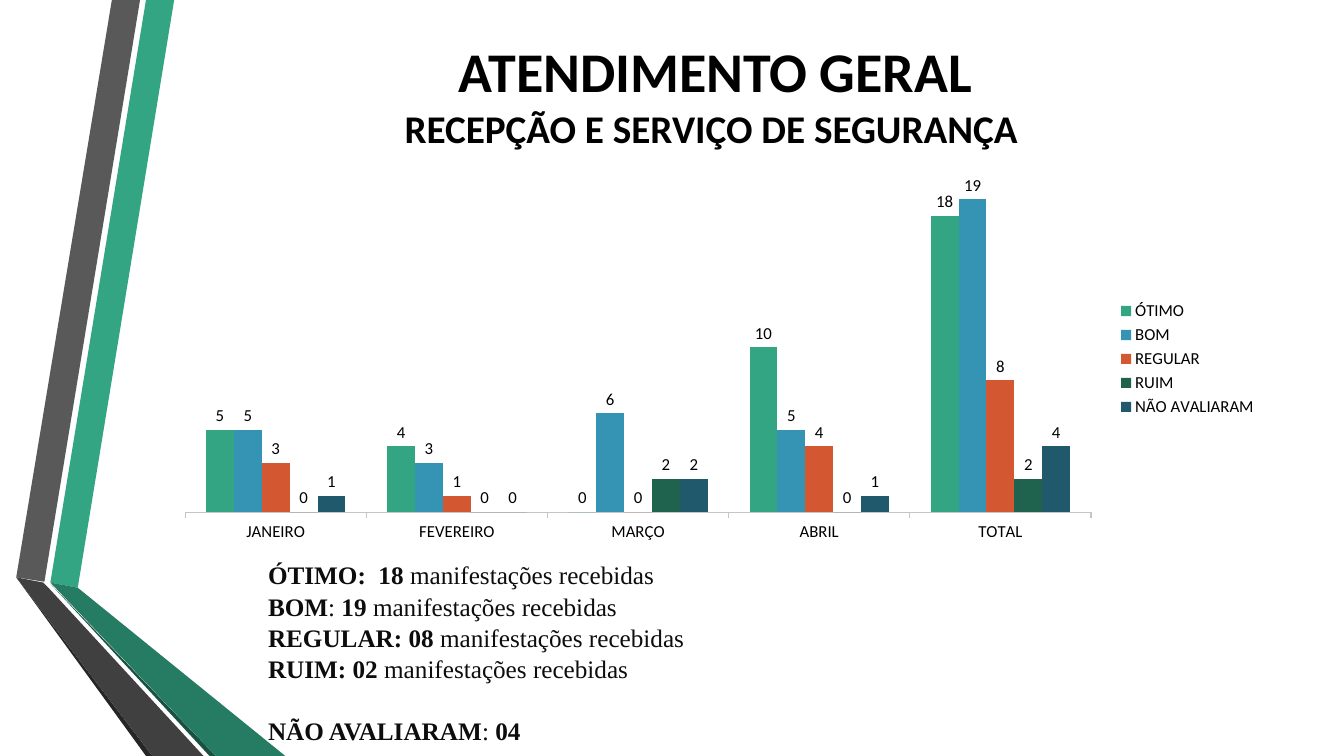
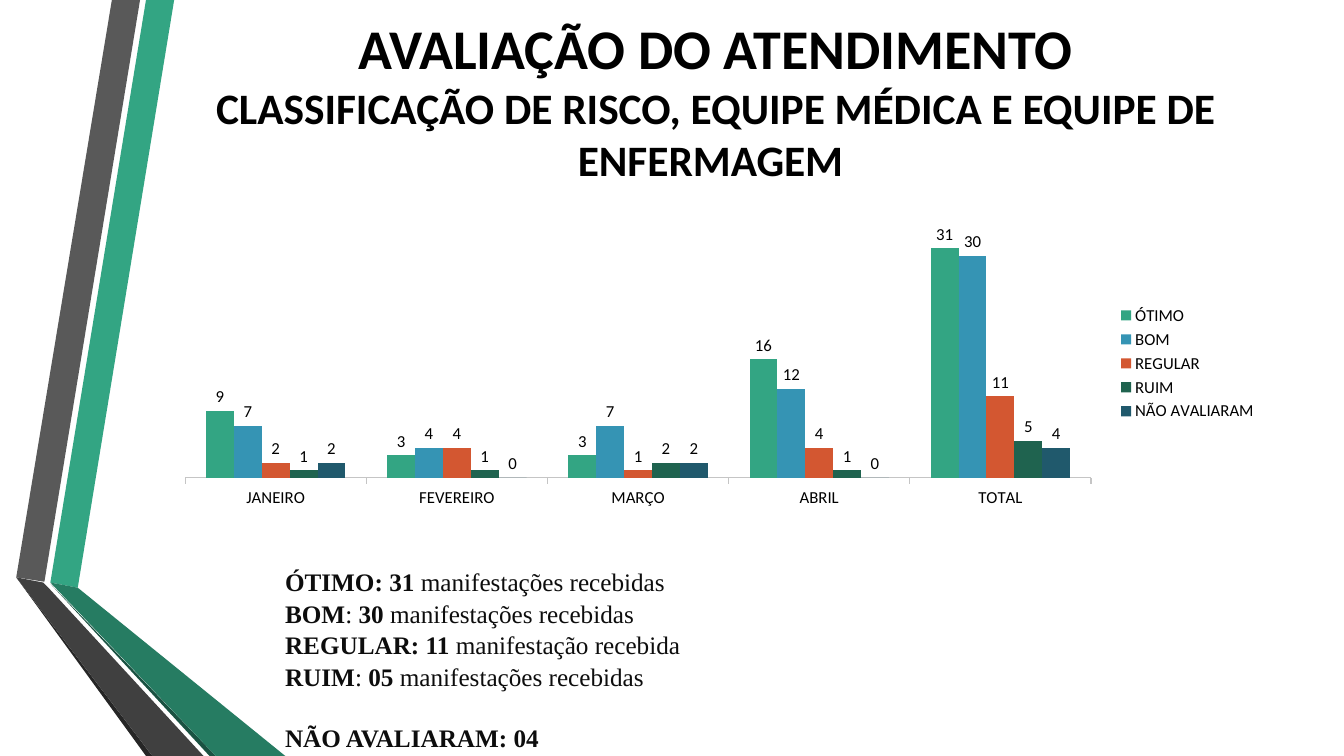
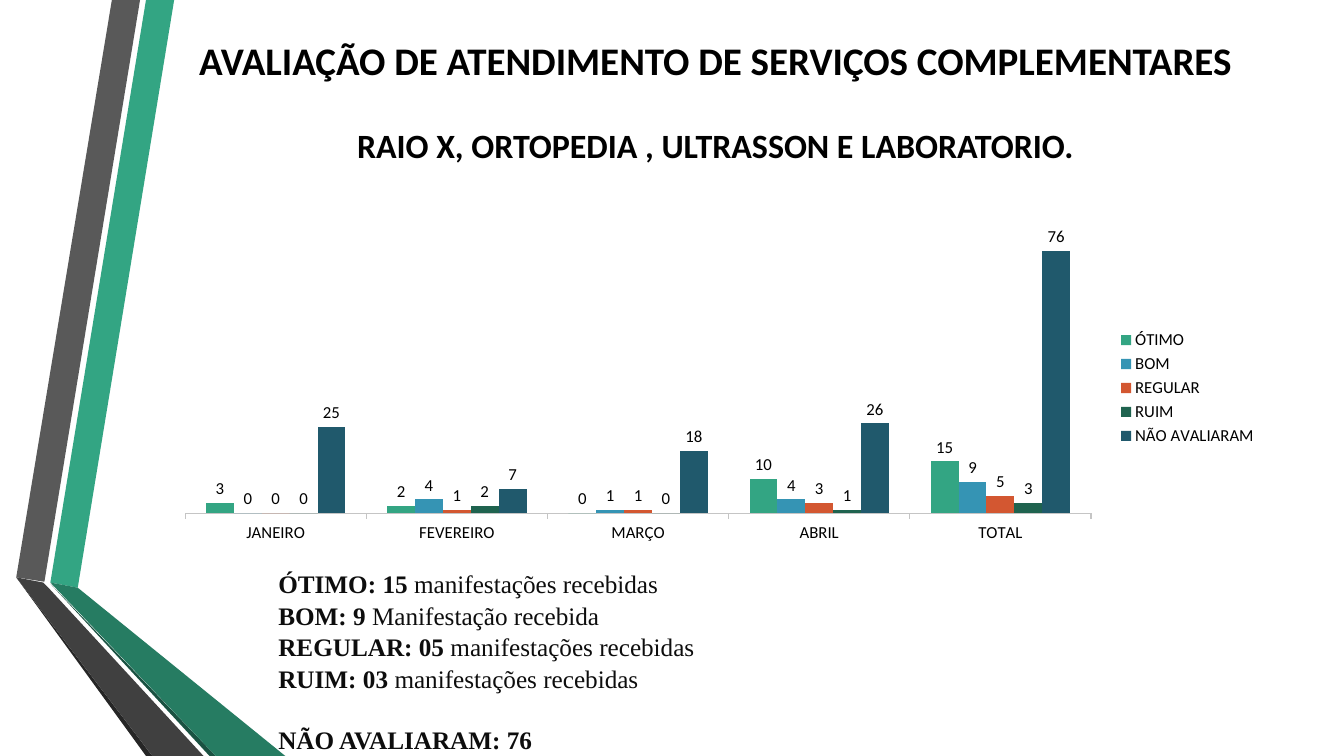
from collections import namedtuple

from lxml import etree
from pptx import Presentation
from pptx.chart.data import CategoryChartData
from pptx.dml.color import RGBColor
from pptx.enum.chart import XL_CHART_TYPE, XL_LABEL_POSITION, XL_LEGEND_POSITION, XL_TICK_MARK
from pptx.enum.text import MSO_ANCHOR, MSO_AUTO_SIZE, PP_ALIGN
from pptx.oxml import parse_xml
from pptx.oxml.ns import nsdecls, qn
from pptx.util import Cm, Pt

CLUSTERED = XL_CHART_TYPE.COLUMN_CLUSTERED
OUTSIDE_END = XL_LABEL_POSITION.OUTSIDE_END
LEGEND_RIGHT = XL_LEGEND_POSITION.RIGHT
TICK_OUT = XL_TICK_MARK.OUTSIDE
TICK_NONE = XL_TICK_MARK.NONE
MIDDLE = MSO_ANCHOR.MIDDLE
TOP = MSO_ANCHOR.TOP
NO_FIT = MSO_AUTO_SIZE.NONE
CENTER = PP_ALIGN.CENTER
LEFT = PP_ALIGN.LEFT

BLACK = RGBColor(0x00, 0x00, 0x00)
INK = RGBColor(0x0D, 0x0D, 0x0D)
AXIS_GRAY = RGBColor(0xC5, 0xC5, 0xC5)
GREEN = RGBColor(0x33, 0xA5, 0x83)
BLUE = RGBColor(0x35, 0x94, 0xB4)
ORANGE = RGBColor(0xD3, 0x57, 0x31)
DARK_GREEN = RGBColor(0x1F, 0x63, 0x4F)
DARK_BLUE = RGBColor(0x20, 0x59, 0x6C)
FOLD_GREEN = RGBColor(0x26, 0x7C, 0x62)
EDGE_GREEN = RGBColor(0x1A, 0x52, 0x42)
GRAY = RGBColor(0x59, 0x59, 0x59)
FOLD_GRAY = RGBColor(0x40, 0x40, 0x40)
EDGE_GRAY = RGBColor(0x26, 0x26, 0x26)

Box = namedtuple("Box", "left top width height")

PAGE_WIDTH, PAGE_HEIGHT = 33.87, 19.05
CONTENT_LEFT, CONTENT_WIDTH = 4.11, 27.84
CONTENT_RIGHT = CONTENT_LEFT + CONTENT_WIDTH
SUMMARY_HEIGHT = 4.88
PLOT_LEFT, PLOT_WIDTH, PLOT_HEIGHT = 0.02, 0.82, 0.86

TITLE_FONT = {"name": "Calibri", "bold": True}
SUMMARY_FONT = {"name": "Times New Roman", "size": Pt(18)}
CHART_FONT = {"name": "Calibri", "size": Pt(12), "bold": False}

RIBBONS = [
    (GREEN, [(1.27, 14.68), (1.96, 14.81), (4.39, 0), (3.68, 0)]),
    (GRAY, [(3.53, 0), (2.82, 0), (0.41, 14.55), (1.12, 14.66)]),
    (EDGE_GRAY, [(0.41, 14.55), (3.68, 19.05), (3.84, 19.05)]),
    (EDGE_GREEN, [(1.27, 14.71), (5.28, 19.05), (5.44, 19.05)]),
    (FOLD_GREEN, [(1.27, 14.68), (5.44, 19.05), (7.19, 19.05), (1.96, 14.81)]),
    (FOLD_GRAY, [(5.13, 19.05), (1.22, 14.81), (1.09, 14.68), (0.41, 14.55), (3.84, 19.05)]),
]

MONTHS = ["JANEIRO", "FEVEREIRO", "MARÇO", "ABRIL", "TOTAL"]
RATINGS = [
    ("ÓTIMO", GREEN),
    ("BOM", BLUE),
    ("REGULAR", ORANGE),
    ("RUIM", DARK_GREEN),
    ("NÃO AVALIARAM", DARK_BLUE),
]

REPORTS = [
    {
        "title": [("ATENDIMENTO GERAL", 40, 0), ("RECEPÇÃO E SERVIÇO DE SEGURANÇA ", 28, 0)],
        "title_span": (0.53, 3.68),
        "chart_span": (4.22, 9.65),
        "plot_top": 0.04,
        "axis_max": 20,
        "counts": [[5, 4, 0, 10, 18], [5, 3, 6, 5, 19], [3, 1, 0, 4, 8],
                   [0, 0, 2, 0, 2], [1, 0, 2, 1, 4]],
        "summary_at": (6.5, 13.94),
        "summary": ["ÓTIMO:  18 |manifestações recebidas", "BOM|: |19 |manifestações recebidas",
                    "REGULAR: 08 |manifestações recebidas", "RUIM: 02 |manifestações recebidas",
                    "NÃO AVALIARAM|: |04"],
    },
    {
        "title": [("AVALIAÇÃO DO ATENDIMENTO", 40, 0),
                  ("CLASSIFICAÇÃO DE RISCO, EQUIPE MÉDICA E EQUIPE DE ENFERMAGEM ", 31, 0)],
        "title_span": (0, 5),
        "chart_span": (5.36, 7.59),
        "plot_top": 0.02,
        "axis_max": 35,
        "counts": [[9, 3, 3, 16, 31], [7, 4, 7, 12, 30], [2, 4, 1, 4, 11],
                   [1, 1, 2, 1, 5], [2, 0, 2, 0, 4]],
        "summary_at": (6.93, 14.12),
        "summary": ["ÓTIMO: 31 |manifestações recebidas", "BOM|: |30 |manifestações recebidas",
                    "REGULAR: 11 |manifestação recebida", "RUIM|: |05 |manifestações recebidas",
                    "NÃO AVALIARAM: 04"],
    },
    {
        "title": [("AVALIAÇÃO DE ATENDIMENTO DE SERVIÇOS COMPLEMENTARES", 27.9, 0),
                  ("RAIO X, ORTOPEDIA , ULTRASSON E LABORATORIO.", 24.3, 30)],
        "title_span": (0, 5.08),
        "chart_span": (5.72, 8.1),
        "plot_top": 0.03,
        "axis_max": 80,
        "counts": [[3, 2, 0, 10, 15], [0, 4, 1, 4, 9], [0, 1, 1, 3, 5],
                   [0, 2, 0, 1, 3], [25, 7, 18, 26, 76]],
        "summary_at": (6.76, 14.17),
        "summary": ["ÓTIMO: 15 |manifestações recebidas", "BOM: 9 |Manifestação recebida",
                    "REGULAR: 05 |manifestações recebidas", "RUIM: 03 |manifestações recebidas",
                    "NÃO AVALIARAM: 76"],
    },
]


def set_attributes(target, values):
    for name, value in values.items():
        setattr(target, name, value)


def set_font(font, values, color):
    set_attributes(font, values)
    font.color.rgb = color


def lengths(box):
    return [Cm(value) for value in box]


def place(shape, box):
    set_attributes(shape, dict(zip(Box._fields, lengths(box))))


def paragraphs(frame, count):
    for _ in range(count - 1):
        frame.add_paragraph()
    return frame.paragraphs


def add_ribbons(layout, page, box):
    for index, (color, points) in enumerate(RIBBONS):
        corners = [(Cm(box.left + x), Cm(box.top + y)) for x, y in points]
        builder = page.shapes.build_freeform(*corners[0], scale=1.0)
        builder.add_line_segments(corners[1:], close=True)
        ribbon = builder.convert_to_shape()
        ribbon.fill.solid()
        ribbon.fill.fore_color.rgb = color
        ribbon.line.fill.background()
        ribbon.shadow.inherit = False
        layout.shapes.element.insert(2 + index, ribbon.element)


def fill_title(title, box, lines):
    place(title, box)
    frame = title.text_frame
    set_attributes(frame, {"word_wrap": True, "auto_size": NO_FIT, "vertical_anchor": MIDDLE})
    for para, (text, size, gap) in zip(paragraphs(frame, len(lines)), lines):
        set_attributes(para, {"alignment": CENTER, "space_before": Pt(gap)})
        span = para.add_run()
        span.text = text
        set_font(span.font, {**TITLE_FONT, "size": Pt(size)}, BLACK)


def fill_summary(body, box, lines):
    place(body, box)
    frame = body.text_frame
    set_attributes(frame, {"word_wrap": True, "auto_size": NO_FIT, "vertical_anchor": TOP})
    for para, line in zip(paragraphs(frame, len(lines)), lines):
        gap = Pt(21.6) if line == lines[-1] else Pt(0)
        set_attributes(para, {"alignment": LEFT, "space_before": gap, "line_spacing": 1.04})
        properties = para._p.get_or_add_pPr()
        properties.set("marL", "0")
        properties.set("indent", "0")
        etree.SubElement(properties, qn("a:buNone"))
        for index, text in enumerate(line.split("|")):
            span = para.add_run()
            span.text = text
            set_font(span.font, {**SUMMARY_FONT, "bold": index % 2 == 0}, INK)


def set_plot_layout(chart, top):
    plot_area = chart.element.find(".//" + qn("c:plotArea"))
    for layout in plot_area.findall(qn("c:layout")):
        plot_area.remove(layout)
    extents = {"x": PLOT_LEFT, "y": top, "w": PLOT_WIDTH, "h": PLOT_HEIGHT}
    modes = "".join(f'<c:{side}Mode val="edge"/>' for side in "xy")
    sizes = "".join(f'<c:{side} val="{value}"/>' for side, value in extents.items())
    plot_area.insert(0, parse_xml(
        f'<c:layout {nsdecls("c")}><c:manualLayout><c:layoutTarget val="inner"/>'
        f"{modes}{sizes}</c:manualLayout></c:layout>"))


def add_ratings_chart(page, box, counts, axis_max, plot_top):
    data = CategoryChartData()
    data.categories = MONTHS
    for (name, _), values in zip(RATINGS, counts):
        data.add_series(name, values)
    chart = page.shapes.add_chart(CLUSTERED, *lengths(box), data).chart
    set_attributes(chart, {"has_title": False, "has_legend": True})
    set_font(chart.font, CHART_FONT, BLACK)
    set_attributes(chart.legend, {"position": LEGEND_RIGHT, "include_in_layout": False})
    set_font(chart.legend.font, CHART_FONT, BLACK)

    set_attributes(chart.value_axis, {"visible": False, "has_major_gridlines": False,
                                      "minimum_scale": 0, "maximum_scale": axis_max})
    months = chart.category_axis
    set_attributes(months, {"major_tick_mark": TICK_OUT, "minor_tick_mark": TICK_NONE})
    set_font(months.tick_labels.font, CHART_FONT, BLACK)
    months.format.line.color.rgb = AXIS_GRAY
    months.format.line.width = Pt(0.75)

    plot = chart.plots[0]
    set_attributes(plot, {"gap_width": 150, "overlap": 0, "vary_by_categories": False})
    for series, (_, color) in zip(plot.series, RATINGS):
        series.format.fill.solid()
        series.format.fill.fore_color.rgb = color
        labels = series.data_labels
        set_attributes(labels, {"show_value": True, "position": OUTSIDE_END})
        set_font(labels.font, CHART_FONT, BLACK)
    set_plot_layout(chart, plot_top)


def build_report(page, report):
    title_box = Box(CONTENT_LEFT, report["title_span"][0], CONTENT_WIDTH, report["title_span"][1])
    chart_box = Box(CONTENT_LEFT, report["chart_span"][0], CONTENT_WIDTH, report["chart_span"][1])
    left, top = report["summary_at"]
    summary_box = Box(left, top, CONTENT_RIGHT - left, SUMMARY_HEIGHT)
    fill_title(page.shapes.title, title_box, report["title"])
    fill_summary(page.placeholders[1], summary_box, report["summary"])
    add_ratings_chart(page, chart_box, report["counts"], report["axis_max"], report["plot_top"])


def main():
    deck = Presentation()
    deck.slide_width, deck.slide_height = Cm(PAGE_WIDTH), Cm(PAGE_HEIGHT)
    layout = deck.slide_layouts[1]
    pages = [deck.slides.add_slide(layout) for _ in REPORTS]
    add_ribbons(layout, pages[0], Box(0, 0, PAGE_WIDTH, PAGE_HEIGHT))
    for page, report in zip(pages, REPORTS):
        build_report(page, report)
    deck.save("out.pptx")


if __name__ == "__main__":
    main()
